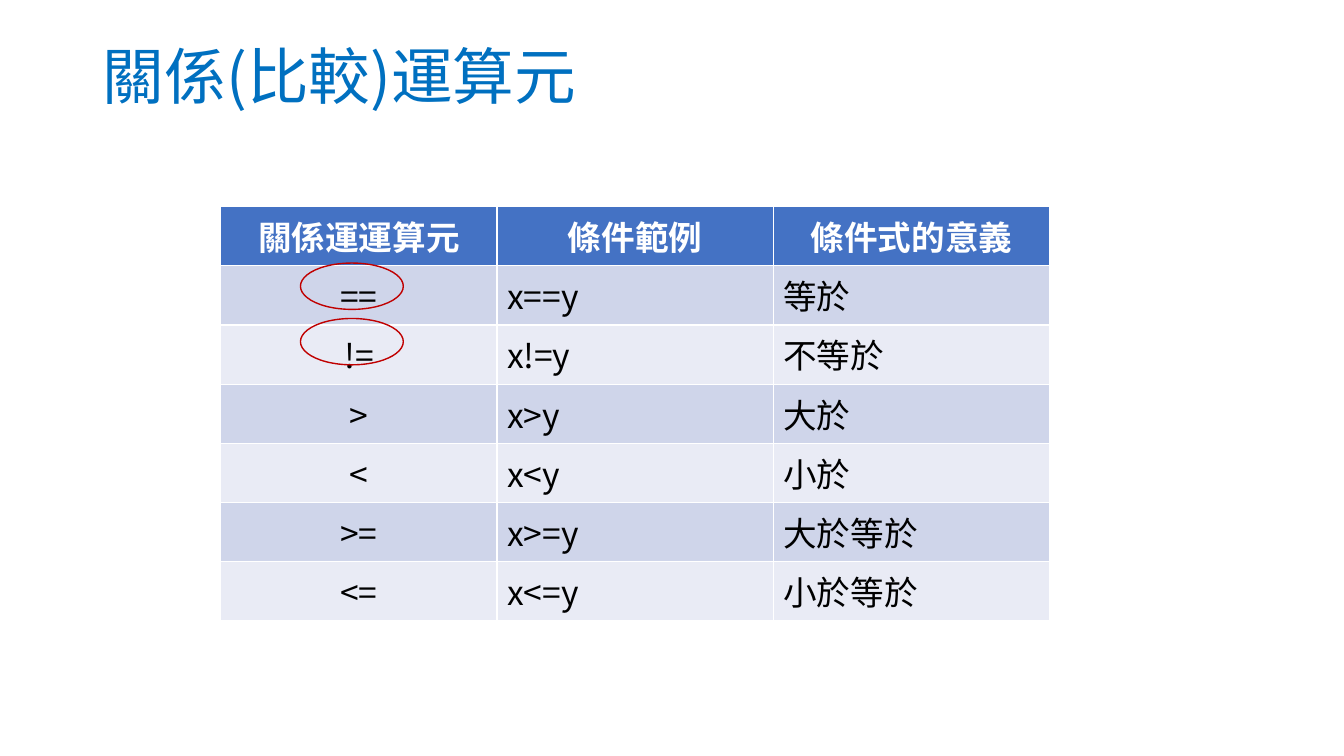
import pptx
import pptx.dml.color
import pptx.enum.shapes
import pptx.enum.text
import pptx.oxml.ns
import pptx.util
from dataclasses import dataclass
from lxml import etree

Inches = pptx.util.Inches
Align = pptx.enum.text.PP_ALIGN


@dataclass(frozen=True)
class Theme:
    font: str = "Noto Sans CJK SC"
    title: str = "0070C0"
    head: str = "4472C4"
    bands: tuple = ("CFD5EA", "E9EBF5")
    white: str = "FFFFFF"
    ink: str = "000000"
    ring: str = "C00000"
    large: int = 44
    small: int = 24


THEME = Theme()
ROWS = [
    ("關係運運算元", "條件範例", "條件式的意義"),
    ("==", "x==y", "等於"),
    ("!=", "x!=y", "不等於"),
    (">", "x>y", "大於"),
    ("<", "x<y", "小於"),
    (">=", "x>=y", "大於等於"),
    ("<=", "x<=y", "小於等於"),
]


def color(code):
    return pptx.dml.color.RGBColor.from_string(code)


def write(frame, text, size=THEME.small, ink=THEME.ink, bold=False, align=Align.LEFT, space=None):
    para = frame.paragraphs[0]
    para.alignment = align
    para.line_spacing = space
    run = para.add_run()
    run.text = text
    run.font.size = pptx.util.Pt(size)
    run.font.bold = bold
    run.font.color.rgb = color(ink)
    run.font.name = THEME.font
    east = etree.SubElement(run._r.get_or_add_rPr(), pptx.oxml.ns.qn("a:ea"))
    east.set("typeface", THEME.font)


def add_title(slide, text):
    title = slide.shapes.title
    title.left, title.top = Inches(0.92), Inches(0.4)
    title.width, title.height = Inches(10.87), Inches(0.78)
    frame = title.text_frame
    frame.auto_size = pptx.enum.text.MSO_AUTO_SIZE.NONE
    frame.vertical_anchor = pptx.enum.text.MSO_ANCHOR.MIDDLE
    write(frame, text, size=THEME.large, ink=THEME.title, space=0.9)


def add_grid(slide, rows):
    grid = slide.shapes.add_table(
        len(rows), len(rows[0]), Inches(2.19), Inches(2.05), Inches(8.22), Inches(4.11)
    ).table
    for i, row in enumerate(rows):
        head = i == 0
        for j, text in enumerate(row):
            cell = grid.cell(i, j)
            cell.fill.solid()
            cell.fill.fore_color.rgb = color(THEME.head if head else THEME.bands[(i - 1) % 2])
            write(
                cell.text_frame, text, bold=head,
                ink=THEME.white if head else THEME.ink,
                align=Align.CENTER if head or j == 0 else Align.LEFT,
            )


def add_ring(slide, top):
    ring = slide.shapes.add_shape(
        pptx.enum.shapes.MSO_SHAPE.OVAL, Inches(2.98), Inches(top), Inches(1.02), Inches(0.46)
    )
    ring.shadow.inherit = False
    ring.fill.background()
    ring.line.color.rgb = color(THEME.ring)
    ring.line.width = pptx.util.Pt(1)


def main():
    deck = pptx.Presentation()
    deck.slide_width, deck.slide_height = Inches(13.33), Inches(7.5)
    slide = deck.slides.add_slide(deck.slide_layouts[5])
    add_title(slide, "關係(比較)運算元")
    add_grid(slide, ROWS)
    for top in (2.61, 3.16):
        add_ring(slide, top)
    deck.save("out.pptx")


if __name__ == "__main__":
    main()
